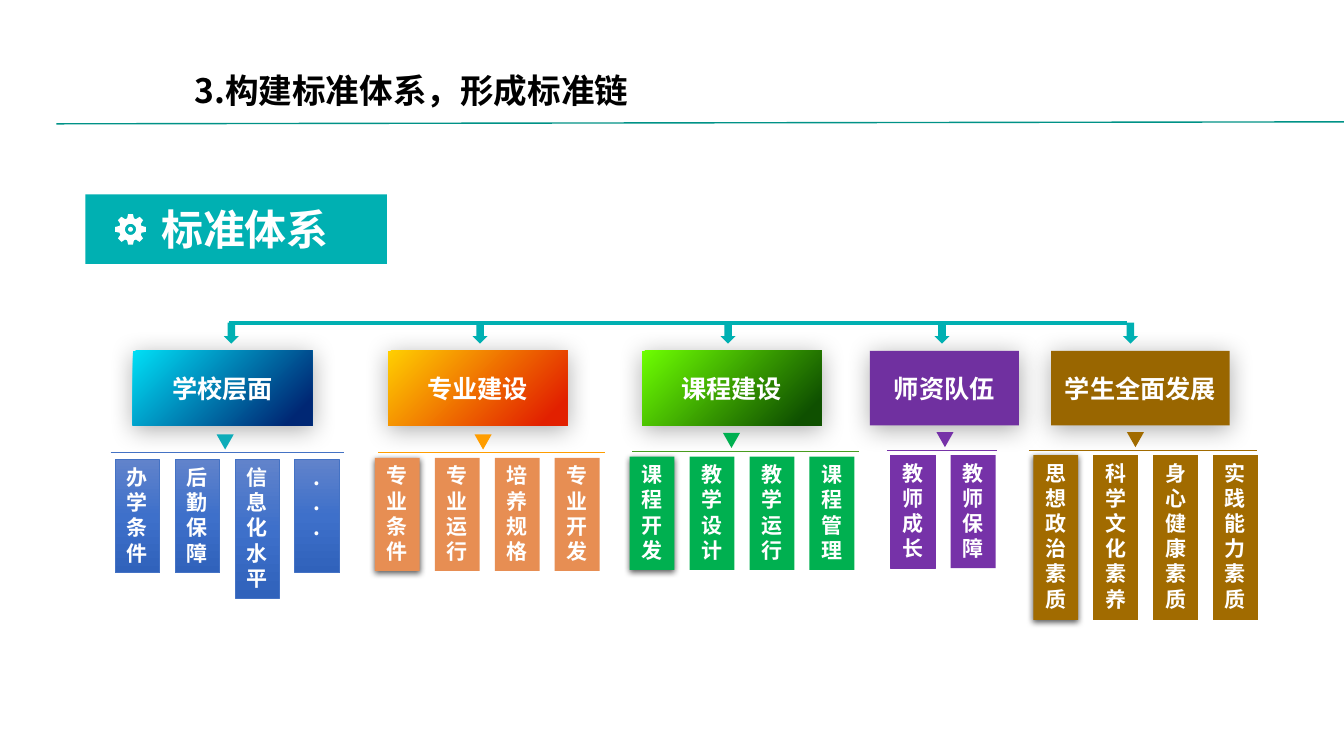
"""Build the slide on the standards system and its chain of standards."""
import math

import pptx
import pptx.util
import pptx.dml.color
import pptx.enum.shapes
import pptx.enum.text
import pptx.oxml
import pptx.oxml.ns

Cm, Pt = pptx.util.Cm, pptx.util.Pt
RGB = pptx.dml.color.RGBColor
SHAPE = pptx.enum.shapes.MSO_SHAPE
ANCHOR = pptx.enum.text.MSO_ANCHOR
ALIGN = pptx.enum.text.PP_ALIGN
AUTO = pptx.enum.text.MSO_AUTO_SIZE
qn = pptx.oxml.ns.qn
NS = pptx.oxml.ns.nsdecls("a")

FONT = "Noto Sans CJK SC"
WHITE = RGB(0xFF, 0xFF, 0xFF)
BLACK = RGB(0x00, 0x00, 0x00)
TEAL = RGB(0x00, 0xB0, 0xB2)
DARK_TEAL = RGB(0x00, 0x92, 0x87)
CYAN = RGB(0x0D, 0xAC, 0xB9)
BLUE = RGB(0x44, 0x72, 0xC4)
AMBER = RGB(0xFF, 0x9D, 0x00)
ORANGE = RGB(0xE7, 0x8E, 0x53)
GREEN = RGB(0x00, 0xB0, 0x50)
LEAF = RGB(0x48, 0x9D, 0x1F)
VIOLET = RGB(0x70, 0x30, 0xA0)
PURPLE = RGB(0x76, 0x32, 0xA8)
BROWN = RGB(0x99, 0x66, 0x00)
OCHRE = RGB(0xA1, 0x6B, 0x00)
BLUE_BAR = [(0, RGB(0x61, 0x83, 0xCB)), (50, RGB(0x3E, 0x70, 0xCA)), (100, RGB(0x30, 0x62, 0xBB))]
BLUE_HEAD = [(0, RGB(0x00, 0xDF, 0xF6)), (90, RGB(0x00, 0x27, 0x74))]
RED_HEAD = [(0, RGB(0xFF, 0xCF, 0x01)), (90, RGB(0xE2, 0x20, 0x00))]
GREEN_HEAD = [(0, RGB(0x6E, 0xFF, 0x01)), (90, RGB(0x0F, 0x50, 0x00))]
HEAD_SHADOW = (33, 17.8, 3, 87)
BAR_SHADOW = (63, 4.5, 1.5, 90)


def add_block(kind, x, y, w, h, fill, angle=0, shadow=None):
    """Add a preset shape with a plain or gradient fill and an optional shadow."""
    sp = slide.shapes.add_shape(kind, Cm(x), Cm(y), Cm(w), Cm(h))
    sp.line.fill.background()
    sp.shadow.inherit = False
    if isinstance(fill, list):
        sp.fill.gradient()
        sp.fill.gradient_angle = 360 - angle
        stops = sp._element.spPr.find(".//" + qn("a:gsLst"))
        for gs in list(stops):
            stops.remove(gs)
        for pos, color in fill:
            stops.append(pptx.oxml.parse_xml(
                f'<a:gs {NS} pos="{pos * 1000}"><a:srgbClr val="{color}"/></a:gs>'))
    else:
        sp.fill.solid()
        sp.fill.fore_color.rgb = fill
    if shadow:
        alpha, blur, dist, direction = shadow
        sp._element.spPr.find(qn("a:effectLst")).append(pptx.oxml.parse_xml(
            f'<a:outerShdw {NS} blurRad="{Pt(blur)}" dist="{Pt(dist)}" dir="{direction * 60000}" '
            f'algn="t" rotWithShape="0"><a:srgbClr val="000000">'
            f'<a:alpha val="{alpha * 1000}"/></a:srgbClr></a:outerShdw>'))
    return sp


def write(sp, text, size, color=WHITE, align=ALIGN.CENTER, anchor=ANCHOR.MIDDLE):
    """Fill a shape with bold text, one paragraph for each line."""
    tf = sp.text_frame
    tf.word_wrap = True
    tf.vertical_anchor = anchor
    tf.text = text
    for p in tf.paragraphs:
        p.alignment = align
        p.font.size = Pt(size)
        p.font.bold = True
        p.font.name = FONT
        p.font.color.rgb = color
        p._p.pPr.find(qn("a:defRPr")).find(qn("a:latin")).addnext(
            pptx.oxml.parse_xml(f'<a:ea {NS} typeface="{FONT}"/>'))
    return tf


prs = pptx.Presentation()
prs.slide_width, prs.slide_height = Cm(33.87), Cm(19.05)
slide = prs.slides.add_slide(prs.slide_layouts[6])

title = slide.shapes.add_textbox(Cm(4.65), Cm(1.63), Cm(14.68), Cm(1.27))
write(title, "3.构建标准体系，形成标准链", 24, BLACK, ALIGN.LEFT, ANCHOR.TOP)

banner = add_block(SHAPE.RECTANGLE, 2.15, 4.9, 7.6, 1.75, TEAL)
write(banner, "标准体系", 30).margin_left = Cm(0.7)

gear_x, gear_y = 3.29, 5.78
rim = [(r, 45 * tooth + a) for tooth in range(8)
       for r, a in ((0.29, -17), (0.39, -9), (0.39, 9), (0.29, 17))]
hole = [(0.14, -10 * k) for k in range(36)]
hub = [(0.06, 10 * k) for k in range(36)]
contours = [[((gear_x + r * math.cos(math.radians(a))) * 1000,
              (gear_y + r * math.sin(math.radians(a))) * 1000) for r, a in ring]
            for ring in (rim, hole, hub)]
builder = slide.shapes.build_freeform(*contours[0][0], scale=Cm(1) / 1000)
builder.add_line_segments(contours[0][1:])
for contour in contours[1:]:
    builder.move_to(*contour[0])
    builder.add_line_segments(contour[1:])
gear = builder.convert_to_shape()
gear.fill.solid()
gear.fill.fore_color.rgb = WHITE
gear.line.fill.background()
gear.shadow.inherit = False

# name, head x, head width, head fill, arrow x, marker x, marker colour, rule (x1, x2, y, colour),
# bars (x, y, fill, outline, outlined count, first shadow), bar texts
groups = [
    ("学校层面", 3.35, 4.52, BLUE_HEAD, 5.64, 5.46, CYAN, (2.79, 8.66, 11.41, BLUE),
     (2.9, 11.58, BLUE_BAR, BLUE, 4, None), ["办学条件", "后勤保障", "信息化水平", ".\n.\n."]),
    ("专业建设", 9.78, 4.52, RED_HEAD, 11.91, 11.96, AMBER, (9.53, 15.24, 11.41, AMBER),
     (9.45, 11.54, ORANGE, None, 0, BAR_SHADOW), ["专业条件", "专业运行", "培养规格", "专业开发"]),
    ("课程建设", 16.18, 4.52, GREEN_HEAD, 18.16, 18.22, GREEN, (15.93, 21.64, 11.37, LEAF),
     (15.87, 11.51, GREEN, None, 0, BAR_SHADOW), ["课程开发", "教学设计", "教学运行", "课程管理"]),
    ("师资队伍", 21.92, 3.76, VIOLET, 23.55, 23.6, PURPLE, (22.35, 25.12, 11.35, PURPLE),
     (22.45, 11.47, PURPLE, PURPLE, 1, None), ["教师成长", "教师保障"]),
    ("学生全面发展", 26.49, 4.5, BROWN, 28.3, 28.4, OCHRE, (25.93, 31.67, 11.35, OCHRE),
     (26.04, 11.47, OCHRE, None, 0, BAR_SHADOW),
     ["思想政治素质", "科学文化素养", "身心健康素质", "实践能力素质"]),
]
lines = [(1.42, 3.12, 33.93, 3.07, DARK_TEAL, 1), (5.77, 8.13, 28.4, 8.13, TEAL, 3)]

for name, x, w, fill, arrow_x, marker_x, marker, rule, bars, labels in groups:
    head = add_block(SHAPE.RECTANGLE, x, 8.84, w, 1.88, fill, 45, HEAD_SHADOW)
    tf = write(head, name, 18)
    tf.margin_left = tf.margin_right = Cm(0.1)
    add_block(SHAPE.DOWN_ARROW, arrow_x, 8.13, 0.38, 0.53, TEAL)

    x1, x2, rule_y, rule_color = rule
    lines.append((x1, rule_y, x2, rule_y, rule_color, 0.5))
    triangle = add_block(SHAPE.ISOSCELES_TRIANGLE, marker_x, rule_y - 0.46, 0.43, 0.38, marker)
    triangle._element.spPr.xfrm.set("flipV", "1")

    bar_x, bar_y, bar_fill, outline, outlined, first_shadow = bars
    for i, label in enumerate(labels):
        height = 0.25 + 0.65 * max(4, len(label) if "\n" not in label else 0)
        bar = add_block(SHAPE.RECTANGLE, bar_x + 1.51 * i, bar_y, 1.13, height, bar_fill, 90,
                        first_shadow if i == 0 else None)
        if i < outlined:
            bar.line.color.rgb = outline
            bar.line.width = Pt(0.5)
        write(bar, label, 15, anchor=ANCHOR.TOP).auto_size = AUTO.SHAPE_TO_FIT_TEXT

for x1, y1, x2, y2, color, width in lines:
    line = slide.shapes.add_connector(
        pptx.enum.shapes.MSO_CONNECTOR.STRAIGHT, Cm(x1), Cm(y1), Cm(x2), Cm(y2))
    line.line.color.rgb = color
    line.line.width = Pt(width)
    line._element.spPr.append(pptx.oxml.parse_xml(f"<a:effectLst {NS}/>"))

prs.save("out.pptx")
